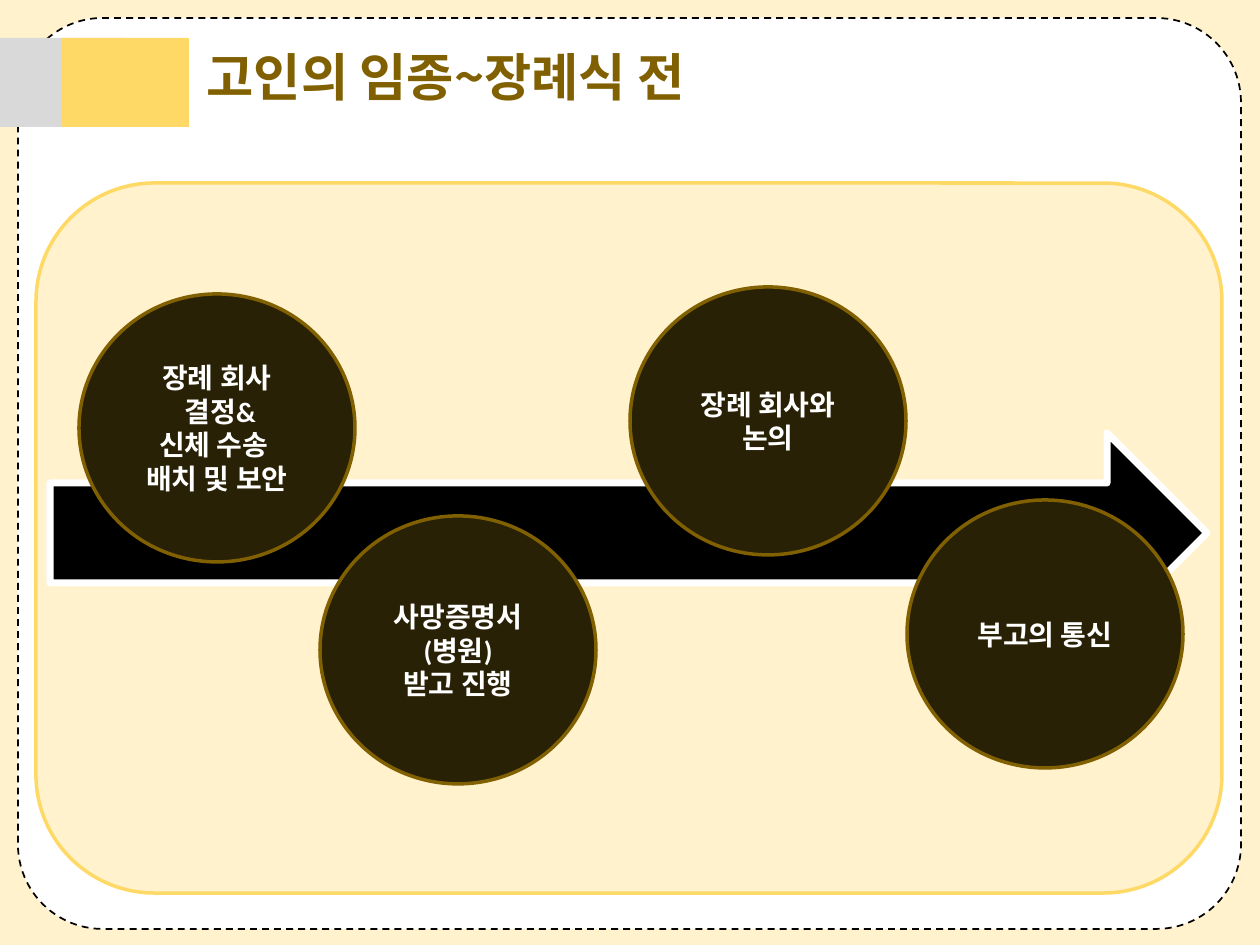
from dataclasses import dataclass

from lxml import etree
from pptx import Presentation, util as u
from pptx.dml.color import RGBColor
from pptx.enum import dml, shapes, text
from pptx.oxml import ns

PX = 914400 / 168
FONT = "Noto Sans CJK KR"
HUES = {
    "cream": "FFF2CC",
    "gold": "FFD966",
    "brown": "806000",
    "dark": "292106",
    "gray": "D9D9D9",
    "white": "FFFFFF",
    "black": "000000",
}
KIND = shapes.MSO_SHAPE


@dataclass
class Box:
    kind: int
    left: int
    top: int
    width: int
    height: int
    fill: str
    line: str = ""
    weight: float = 0
    round: float | None = None
    dash: bool = False


@dataclass
class Step:
    left: int
    top: int
    words: str


def px(size: int) -> u.Emu:
    return u.Emu(round(size * PX))


def hue(name: str) -> RGBColor:
    return RGBColor.from_string(HUES[name])


def style(para, size: int, color: str, face: str, align: int) -> None:
    para.alignment = align
    for run in para.runs:
        font = run.font
        font.size, font.bold, font.name = u.Pt(size), True, face
        font.color.rgb = hue(color)
        east = etree.SubElement(font._element, ns.qn("a:ea"))
        east.set("typeface", FONT)


def draw(slide, box: Box):
    shape = slide.shapes.add_shape(
        box.kind, px(box.left), px(box.top), px(box.width), px(box.height))
    shape.shadow.inherit = False
    shape.fill.solid()
    shape.fill.fore_color.rgb = hue(box.fill)
    if box.line:
        shape.line.color.rgb = hue(box.line)
        shape.line.width = u.Pt(box.weight)
    else:
        shape.line.fill.background()
    if box.dash:
        shape.line.dash_style = dml.MSO_LINE.DASH
    if box.round is not None:
        shape.adjustments[0] = box.round
    return shape


def place(slide, step: Step) -> None:
    disc = draw(slide, Box(KIND.OVAL, step.left, step.top, 276, 268,
                           "dark", "brown", 1.5))
    frame = disc.text_frame
    frame.word_wrap = True
    frame.vertical_anchor = text.MSO_ANCHOR.MIDDLE
    frame.text = step.words
    for para in frame.paragraphs:
        style(para, 12, "white", "Calibri", text.PP_ALIGN.CENTER)


def head(slide, words: str) -> None:
    title = slide.shapes.title
    title.left, title.top = px(190), px(37)
    title.width, title.height = px(961), px(77)
    frame = title.text_frame
    frame.text = words
    frame.word_wrap = True
    frame.auto_size = text.MSO_AUTO_SIZE.NONE
    frame.vertical_anchor = text.MSO_ANCHOR.TOP
    style(frame.paragraphs[0], 22, "brown", FONT, text.PP_ALIGN.LEFT)


BOXES = [
    # Page card and the two title tabs
    Box(KIND.ROUNDED_RECTANGLE, 18, 18, 1223, 911, "white", "black", 0.75,
        0.093, True),
    Box(KIND.RECTANGLE, 0, 38, 124, 89, "gray"),
    Box(KIND.RECTANGLE, 62, 38, 127, 89, "gold"),
    # Panel and time arrow
    Box(KIND.ROUNDED_RECTANGLE, 36, 183, 1186, 710, "cream", "gold", 1.5,
        0.167),
    Box(KIND.RIGHT_ARROW, 50, 433, 1157, 200, "black", "white", 3),
]
STEPS = [
    Step(320, 516, "사망증명서(병원)\n받고 진행"),
    Step(907, 500, "부고의 통신"),
    Step(79, 294, "장례 회사\n 결정&\n신체 수송 \n배치 및 보안"),
    Step(630, 287, "장례 회사와 논의"),
]


def main() -> None:
    deck = Presentation()
    deck.slide_width, deck.slide_height = px(1260), px(945)
    slide = deck.slides.add_slide(deck.slide_layouts[5])
    slide.background.fill.solid()
    slide.background.fill.fore_color.rgb = hue("cream")

    for box in BOXES:
        draw(slide, box)
    for step in STEPS:
        place(slide, step)

    # Title goes in front of the card
    head(slide, "고인의 임종~장례식 전")
    tree = slide.shapes._spTree
    tree.append(slide.shapes.title._element)

    deck.save("out.pptx")


if __name__ == "__main__":
    main()
